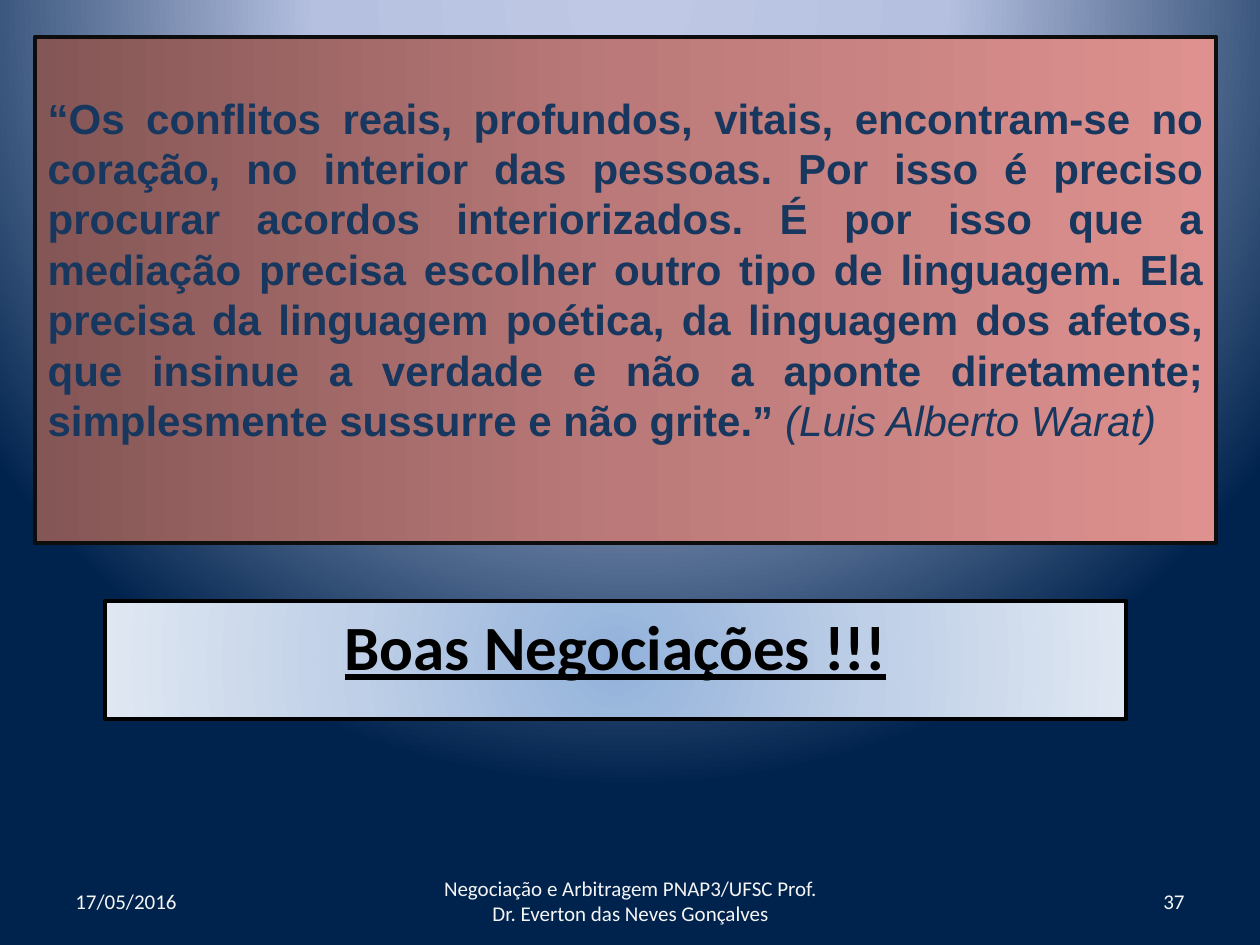
from lxml import etree
from pptx import Presentation
from pptx.dml.color import RGBColor
from pptx.enum import shapes, text
from pptx.oxml.ns import nsdecls, qn
from pptx.util import Inches, Pt

THEME = {
    "head": "Calibri", "body": "Arial",
    "big": 36, "mid": 24, "lead": 28.8, "small": 12, "line": 2.25,
    "black": "000000", "edge": "0D0D0D", "navy": "17375E", "pale": "F5F5F5",
    "sky": [(0, "BFC9E5"), (40, "B5C0E0"), (100, "00234D")],
    "ice": [(0, "93B2DB"), (50, "BECFE7"), (100, "E0E7F2")],
    "rose": [(0, "845655"), (50, "BB7A79"), (100, "DE918F")],
}
QUOTE = [
    ("“Os conflitos reais, profundos, vitais, encontram-se no coração, no interior "
     "das pessoas. Por isso é preciso procurar acordos interiorizados. É por isso "
     "que a mediação precisa escolher outro tipo de linguagem. Ela precisa da "
     "linguagem poética, da linguagem dos afetos, que insinue a verdade e não a "
     "aponte diretamente; simplesmente sussurre e não grite.” ", True),
    ("(Luis Alberto Warat)", False),
]
WISH = "Boas Negociações !!!"
FOOT = [
    ("17/05/2016", 0.5, 2.33, text.PP_ALIGN.LEFT),
    ("Negociação e Arbitragem PNAP3/UFSC Prof. Dr. Everton das Neves Gonçalves",
     3.42, 3.17, text.PP_ALIGN.CENTER),
    ("37", 7.17, 2.33, text.PP_ALIGN.RIGHT),
]


def blend(fill, root, stops, focus=None):
    fill.gradient()
    old = next(root.iter(qn("a:gradFill")))
    marks = "".join(f'<a:gs pos="{pos * 1000}"><a:srgbClr val="{tint}"/></a:gs>'
                    for pos, tint in stops)
    if focus:
        sides = " ".join(f'{side}="{num * 1000}"' for side, num in zip("ltrb", focus))
        kind = f'<a:path path="circle"><a:fillToRect {sides}/></a:path>'
    else:
        kind = '<a:lin ang="0" scaled="0"/>'
    new = etree.fromstring(f'<a:gradFill {nsdecls("a")} rotWithShape="1">'
                           f'<a:gsLst>{marks}</a:gsLst>{kind}</a:gradFill>')
    old.getparent().replace(old, new)


def style(run, face, size, tint, bold=False):
    font = run.font
    font.name, font.size, font.bold = face, Pt(size), bold
    font.color.rgb = RGBColor.from_string(tint)


def border(shape, tint):
    shape.line.color.rgb = RGBColor.from_string(tint)
    shape.line.width = Pt(THEME["line"])


def add_quote(slide):
    box = slide.shapes.add_shape(shapes.MSO_SHAPE.RECTANGLE, Inches(0.28),
                                 Inches(0.29), Inches(9.37), Inches(4.02))
    box.shadow.inherit = False
    blend(box.fill, box.element, THEME["rose"])
    border(box, THEME["edge"])
    frame = box.text_frame
    frame.word_wrap = True
    frame.vertical_anchor = text.MSO_ANCHOR.TOP
    frame.margin_top = Inches(0.44)
    para = frame.paragraphs[0]
    para.alignment = text.PP_ALIGN.JUSTIFY
    para.line_spacing = Pt(THEME["lead"])
    for words, bold in QUOTE:
        run = para.add_run()
        run.text = words
        style(run, THEME["body"], THEME["mid"], THEME["navy"], bold)
        run.font.italic = not bold


def add_wish(slide):
    box = slide.placeholders[1]
    box.left, box.top = Inches(0.83), Inches(4.77)
    box.width, box.height = Inches(8.11), Inches(0.94)
    blend(box.fill, box.element, THEME["ice"], (50, 50, 50, 50))
    border(box, THEME["black"])
    frame = box.text_frame
    frame.text = WISH
    frame.auto_size = text.MSO_AUTO_SIZE.NONE
    frame.vertical_anchor = text.MSO_ANCHOR.TOP
    para = frame.paragraphs[0]
    para.alignment = text.PP_ALIGN.CENTER
    style(para.runs[0], THEME["head"], THEME["big"], THEME["black"], True)
    para.runs[0].font.underline = True


def add_foot(slide):
    for words, left, width, align in FOOT:
        box = slide.shapes.add_textbox(Inches(left), Inches(6.95),
                                       Inches(width), Inches(0.4))
        frame = box.text_frame
        frame.text = words
        frame.word_wrap = True
        frame.vertical_anchor = text.MSO_ANCHOR.MIDDLE
        para = frame.paragraphs[0]
        para.alignment = align
        style(para.runs[0], THEME["head"], THEME["small"], THEME["pale"])


def main():
    deck = Presentation()
    deck.slide_width, deck.slide_height = Inches(10), Inches(7.5)
    slide = deck.slides.add_slide(deck.slide_layouts[0])
    title = slide.shapes.title.element
    title.getparent().remove(title)
    blend(slide.background.fill, slide.element, THEME["sky"], (50, -80, 50, 180))
    add_wish(slide)
    add_quote(slide)
    add_foot(slide)
    deck.save("out.pptx")


if __name__ == "__main__":
    main()
